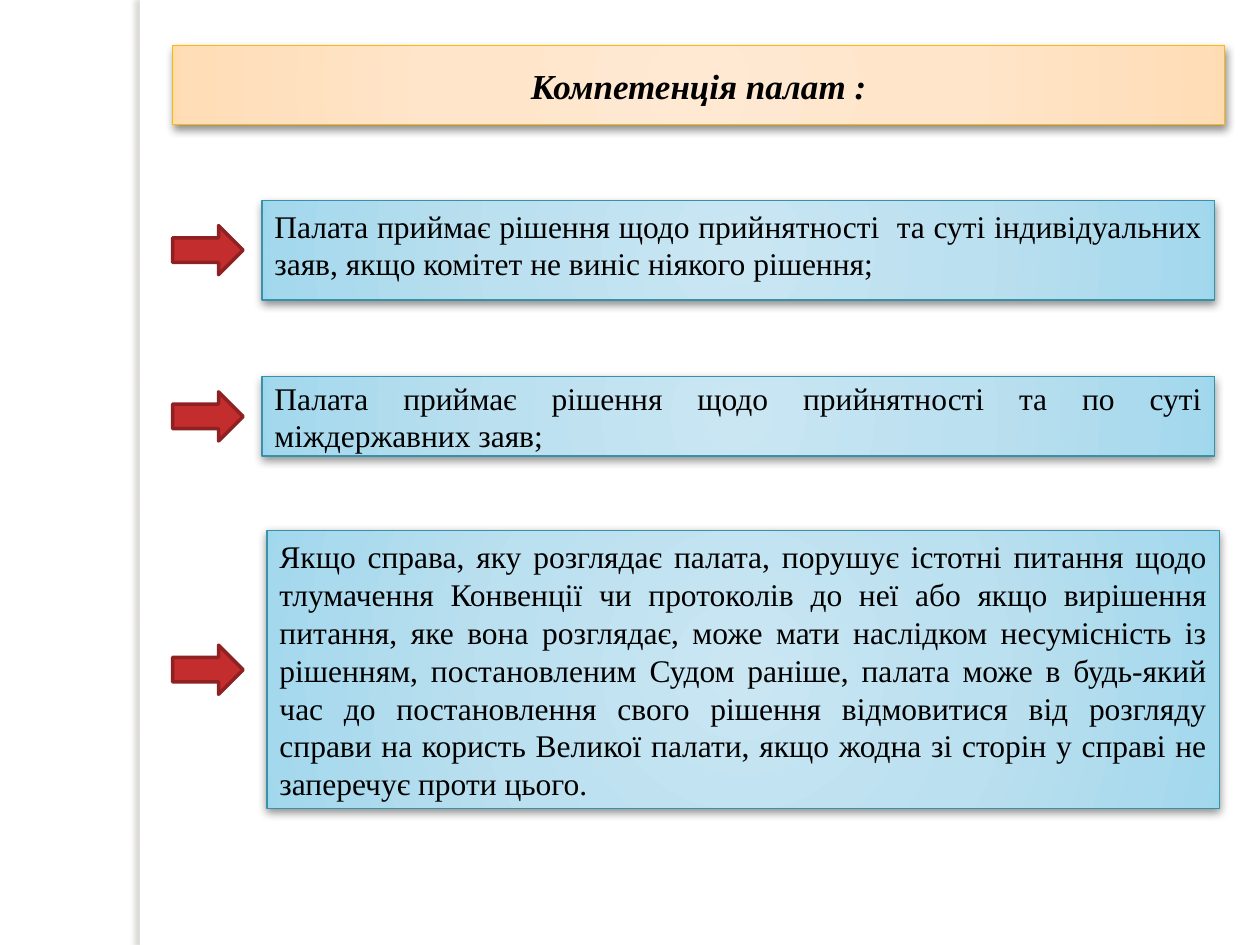
from lxml import etree
from pptx import Presentation
from pptx.dml.color import RGBColor
from pptx.enum import shapes, text
from pptx.oxml.ns import qn
from pptx.util import Inches, Pt

FONT = "Times New Roman"
SHAPE = shapes.MSO_SHAPE
ALIGN = text.PP_ALIGN
ANCHOR = text.MSO_ANCHOR

TITLE = "Компетенція палат :"
POWERS = [
    (2.08, 1.59, 0.79, ANCHOR.TOP,
     "Палата приймає рішення щодо прийнятності  та суті індивідуальних заяв, "
     "якщо комітет не виніс ніякого рішення;"),
    (2.08, 2.99, 0.63, ANCHOR.MIDDLE,
     "Палата приймає рішення щодо прийнятності та по суті міждержавних заяв;"),
    (2.12, 4.21, 2.21, ANCHOR.MIDDLE,
     "Якщо справа, яку розглядає палата, порушує істотні питання щодо тлумачення "
     "Конвенції чи протоколів до неї або якщо вирішення питання, яке вона розглядає, "
     "може мати наслідком несумісність із рішенням, постановленим Судом раніше, "
     "палата може в будь-який час до постановлення свого рішення відмовитися від "
     "розгляду справи на користь Великої палати, якщо жодна зі сторін у справі не "
     "заперечує проти цього."),
]
STOPS = (0, 50, 97, 100)
ORANGE = ("FFE9D3", "FFE5C9", "FFDDB7", "FFDBB2")
BLUE = ("C9E6F2", "BBE0EF", "A4D8ED", "9BD7EE")
LEFT, BOX_W = 1.37, 7.56
ARROW_W, ARROW_H = 0.56, 0.39


def rgb(value):
    return RGBColor.from_string(value)


def sub(parent, tag, **attrs):
    return etree.SubElement(parent, qn(tag), {k: str(v) for k, v in attrs.items()})


def add_shape(slide, kind, left, top, width, height):
    s = slide.shapes.add_shape(kind, *map(Inches, (left, top, width, height)))
    s.shadow.inherit = False
    return s


def fill_solid(s, color):
    s.fill.solid()
    s.fill.fore_color.rgb = rgb(color)


def set_line(s, color, width):
    s.line.color.rgb = rgb(color)
    s.line.width = Pt(width)


def add_shadow(s, color, alpha, blur, distance, angle):
    effects = s.element.spPr.find(qn("a:effectLst"))
    shadow = sub(effects, "a:outerShdw", blurRad=Pt(blur), dist=Pt(distance),
                 dir=angle * 60000, rotWithShape=0)
    sub(sub(shadow, "a:srgbClr", val=color), "a:alpha", val=alpha * 1000)


def fill_radial(s, colors):
    s.fill.gradient()
    grad = s.element.spPr.find(qn("a:gradFill"))
    for child in list(grad):
        grad.remove(child)
    stops = sub(grad, "a:gsLst")
    for pos, color in zip(STOPS, colors):
        sub(sub(stops, "a:gs", pos=pos * 1000), "a:srgbClr", val=color)
    sub(sub(grad, "a:path", path="circle"), "a:fillToRect",
        l=50000, t=50000, r=50000, b=50000)


def add_panel(slide, box, colors, line, words, size, align, anchor, strong=False):
    s = add_shape(slide, SHAPE.RECTANGLE, *box)
    fill_radial(s, colors)
    set_line(s, line, 0.75)
    add_shadow(s, "000000", 43, 5, 2, 90)
    tf = s.text_frame
    tf.word_wrap = True
    tf.vertical_anchor = anchor
    p = tf.paragraphs[0]
    p.alignment = align
    r = p.add_run()
    r.text = words
    r.font.name = FONT
    r.font.size = Pt(size)
    r.font.bold = r.font.italic = strong
    r.font.color.rgb = rgb("000000")


def main():
    prs = Presentation()
    prs.slide_width, prs.slide_height = Inches(10), Inches(7.5)
    slide = prs.slides.add_slide(prs.slide_layouts[6])

    strip = add_shape(slide, SHAPE.RECTANGLE, 1.11, 0, 0.08, 7.5)
    fill_solid(strip, "FFFFFF")
    strip.line.fill.background()
    add_shadow(strip, "736F63", 25, 3, 3, 180)

    add_panel(slide, (LEFT, 0.36, 8.35, 0.63), ORANGE, "FEB80A", TITLE, 20,
              ALIGN.CENTER, ANCHOR.MIDDLE, strong=True)
    for left, top, height, anchor, words in POWERS:
        add_panel(slide, (left, top, BOX_W, height), BLUE, "3891A7", words, 18,
                  ALIGN.JUSTIFY, anchor)
        arrow = add_shape(slide, SHAPE.RIGHT_ARROW, LEFT,
                          top + (height - ARROW_H) / 2, ARROW_W, ARROW_H)
        fill_solid(arrow, "C32D2E")
        set_line(arrow, "902122", 2)

    prs.save("out.pptx")


if __name__ == "__main__":
    main()
